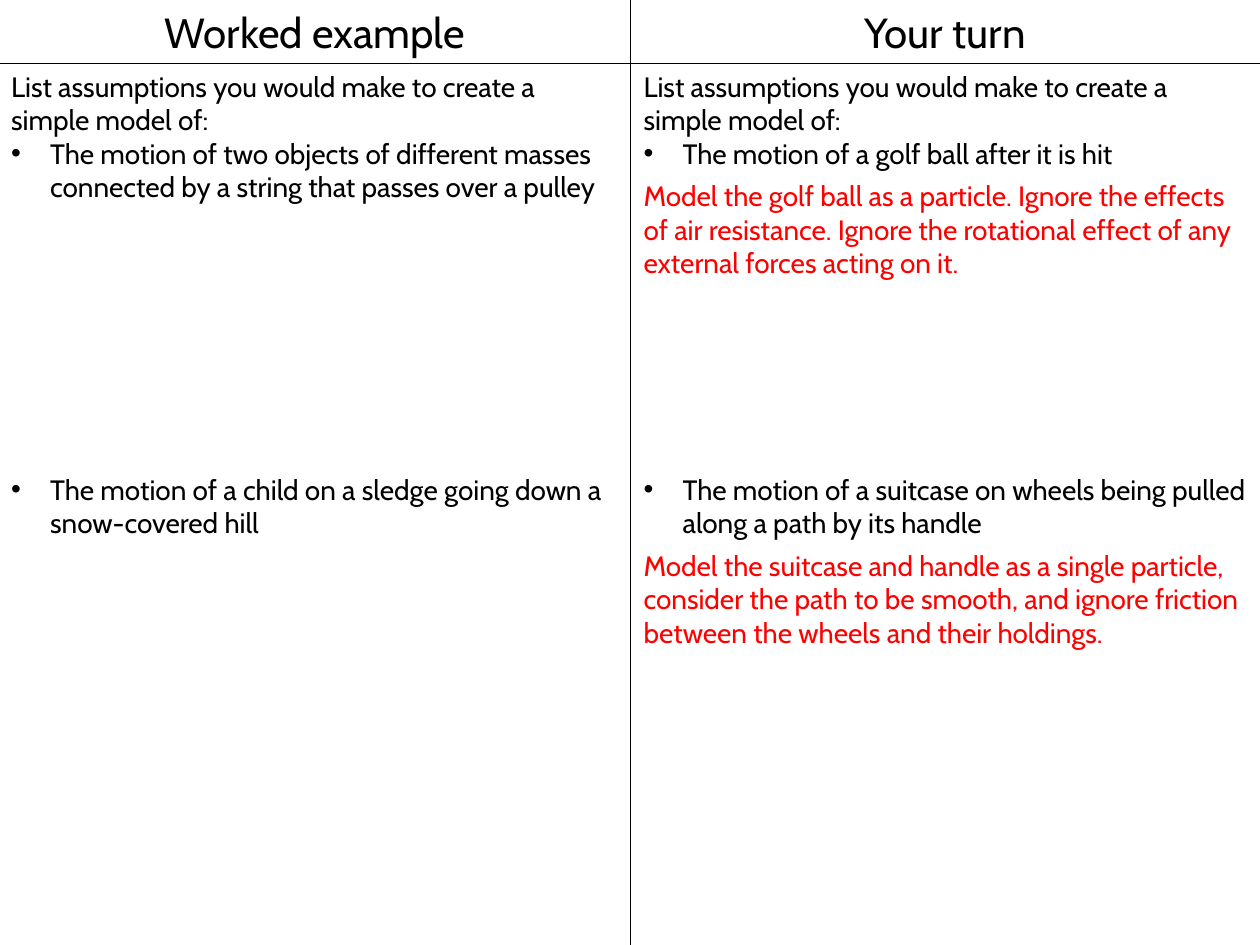
import pptx
import pptx.dml.color
import pptx.enum.shapes
import pptx.enum.text
import pptx.oxml.ns
import pptx.util
from lxml import etree
from pptx.util import Inches

BLACK, RED = "000000", "FF0000"
LINE_PITCH = 19.2  # points per line of 16 pt text


def rgb(value):
    return pptx.dml.color.RGBColor.from_string(value)


def add_text(left, top, height, paragraphs, size=16, color=BLACK, centred=False):
    """Each paragraph is (text, is bulleted, lines of space before)."""
    box = slide.shapes.add_textbox(Inches(left), Inches(top), Inches(5), Inches(height))
    frame = box.text_frame
    frame.word_wrap = True
    frame.auto_size = pptx.enum.text.MSO_AUTO_SIZE.SHAPE_TO_FIT_TEXT
    for index, (text, bulleted, gap_lines) in enumerate(paragraphs):
        paragraph = frame.paragraphs[0] if index == 0 else frame.add_paragraph()
        paragraph.text = text
        if gap_lines:
            paragraph.space_before = pptx.util.Pt(gap_lines * LINE_PITCH)
        if bulleted:
            properties = paragraph._p.get_or_add_pPr()
            properties.set("marL", str(Inches(0.31)))
            properties.set("indent", str(Inches(-0.31)))
            etree.SubElement(properties, pptx.oxml.ns.qn("a:buFont"), typeface="Arial")
            etree.SubElement(properties, pptx.oxml.ns.qn("a:buChar"), char="•")
        if centred:
            paragraph.alignment = pptx.enum.text.PP_ALIGN.CENTER
        paragraph.font.name = "Cabin"
        paragraph.font.size = pptx.util.Pt(size)
        paragraph.font.color.rgb = rgb(color)


presentation = pptx.Presentation()
presentation.slide_width = Inches(10)
presentation.slide_height = Inches(7.5)
slide = presentation.slides.add_slide(presentation.slide_layouts[6])

# Dividers: under the headings and between the columns
for x1, y1, x2, y2 in [(0, 0.5, 10, 0.5), (5, 0, 5, 7.5)]:
    divider = slide.shapes.add_connector(
        pptx.enum.shapes.MSO_CONNECTOR.STRAIGHT,
        Inches(x1), Inches(y1), Inches(x2), Inches(y2))
    divider.line.color.rgb = rgb(BLACK)
    divider.line.width = pptx.util.Pt(0.5)
    etree.SubElement(divider._element.spPr, pptx.oxml.ns.qn("a:effectLst"))

# Column headings
for left, heading in [(0, "Worked example"), (5, "Your turn")]:
    add_text(left, 0, 0.5, [(heading, False, 0)], size=24, centred=True)

# Questions: the second one starts lower down, leaving room for an answer
instruction = "List assumptions you would make to create a simple model of:"
questions = [
    (-0.01, 8,
     "The motion of two objects of different masses connected by a string "
     "that passes over a pulley",
     "The motion of a child on a sledge going down a snow-covered hill"),
    (5.01, 9,
     "The motion of a golf ball after it is hit",
     "The motion of a suitcase on wheels being pulled along a path by its handle"),
]
for left, answer_lines, first, second in questions:
    add_text(left, 0.5, 4.14, [
        (instruction, False, 0),
        (first, True, 0),
        (second, True, answer_lines),
    ])

# Answers in the right column
add_text(5.01, 1.37, 3.87, [
    ("Model the golf ball as a particle. Ignore the effects of air resistance. "
     "Ignore the rotational effect of any external forces acting on it.", False, 0),
    ("Model the suitcase and handle as a single particle, consider the path to be "
     "smooth, and ignore friction between the wheels and their holdings.", False, 8),
], color=RED)

presentation.save("out.pptx")
